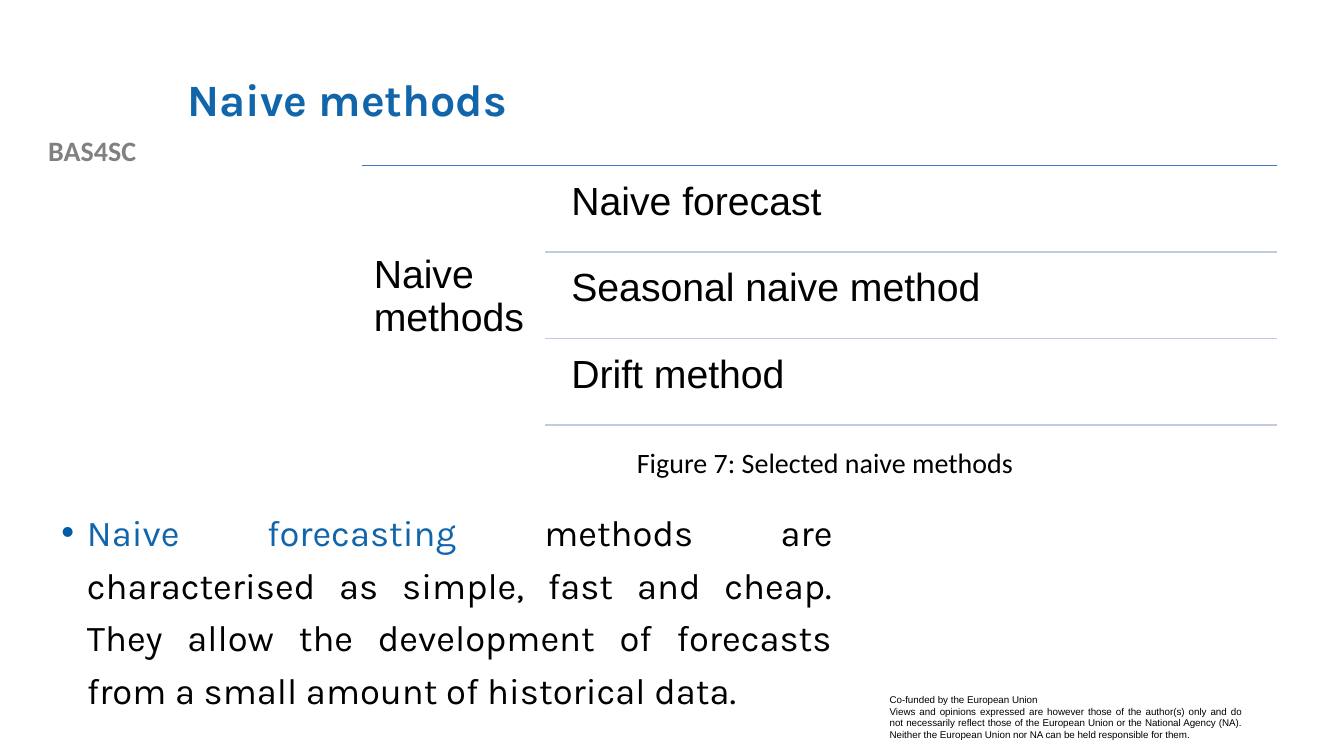
import pptx
import pptx.dml.color
import pptx.enum.shapes
import pptx.enum.text
import pptx.oxml
import pptx.oxml.ns
import pptx.util
from pptx.util import Cm

ALIGN = pptx.enum.text.PP_ALIGN
ANCHOR = pptx.enum.text.MSO_ANCHOR
COLOURS = {
    "black": "000000", "white": "FFFFFF", "grey": "808080", "blue": "1065AB",
    "bullet": "015BA6", "top line": "4472C4", "row line": "C1C9E4",
}

PROJECT = "BAS4SC"
TITLE = "Naive methods"
GROUP = "Naive methods"
METHODS = ["Naive forecast", "Seasonal naive method", "Drift method"]
CAPTION = "Figure 7: Selected naive methods"
BODY = [("Naive forecasting ", "blue"),
        ("methods are characterised as simple, fast and cheap. They allow the "
         "development of forecasts from a small amount of historical data.", "black")]
DISCLAIMER = [
    "Co-funded by the European Union",
    "Views and opinions expressed are however those of the author(s) only and do not "
    "necessarily reflect those of the European Union or the National Agency (NA). "
    "Neither the European Union nor NA can be held responsible for them.",
]

# Diagram measures in centimetres
LEFT, TOP, RIGHT = 9.12, 4.17, 32.18
BRANCH_LEFT, TEXT_LEFT = 13.74, 14.1
ROW_HEIGHT, ROW_GAP = 2.18, 0.1


def colour(name):
    return pptx.dml.color.RGBColor.from_string(COLOURS[name])


def add_bullet(paragraph):
    """Give the paragraph a coloured round bullet with a hanging indent."""
    properties = paragraph._p.get_or_add_pPr()
    properties.set("marL", str(Cm(0.64)))
    properties.set("indent", str(-Cm(0.64)))
    namespace = pptx.oxml.ns.nsdecls("a")
    for xml in (
        f'<a:buClr {namespace}><a:srgbClr val="{COLOURS["bullet"]}"/></a:buClr>',
        f'<a:buFont {namespace} typeface="Arial"/>',
        f'<a:buChar {namespace} char="•"/>',
    ):
        properties.append(pptx.oxml.parse_xml(xml))


def add_text(slide, paragraphs, left, top, width, height, *, font, size,
             text_colour="black", bold=False, align=ALIGN.LEFT, anchor=ANCHOR.TOP,
             spacing=1.0, inset=None, fill=None, bullet=False):
    """Add text; each paragraph is a string or a list of (text, colour) runs."""
    box = (Cm(left), Cm(top), Cm(width), Cm(height))
    if fill:
        shape = slide.shapes.add_shape(pptx.enum.shapes.MSO_SHAPE.RECTANGLE, *box)
        shape.shadow.inherit = False
        shape.fill.solid()
        shape.fill.fore_color.rgb = colour(fill)
        shape.line.fill.background()
    else:
        shape = slide.shapes.add_textbox(*box)
    frame = shape.text_frame
    frame.word_wrap = True
    frame.vertical_anchor = anchor
    if inset is not None:
        frame.margin_left = frame.margin_right = Cm(inset)
        frame.margin_top = frame.margin_bottom = Cm(inset)
    for index, content in enumerate(paragraphs):
        paragraph = frame.add_paragraph() if index else frame.paragraphs[0]
        paragraph.alignment = align
        paragraph.line_spacing = spacing
        if bullet:
            add_bullet(paragraph)
        runs = [(content, text_colour)] if isinstance(content, str) else content
        for text, run_colour in runs:
            run = paragraph.add_run()
            run.text = text
            run.font.name = font
            run.font.size = pptx.util.Pt(size)
            run.font.bold = bold
            run.font.color.rgb = colour(run_colour)


def add_rule(slide, left, y, line_colour):
    line = slide.shapes.add_connector(
        pptx.enum.shapes.MSO_CONNECTOR.STRAIGHT, Cm(left), Cm(y), Cm(RIGHT), Cm(y))
    line.line.color.rgb = colour(line_colour)
    line.line.width = pptx.util.Pt(1)
    line._element.spPr.append(pptx.oxml.parse_xml(
        f'<a:effectLst {pptx.oxml.ns.nsdecls("a")}/>'))


def add_diagram(slide):
    label = dict(font="Arial", size=28, spacing=0.9, inset=0.3)
    add_rule(slide, LEFT, TOP, "top line")
    add_text(slide, [GROUP], LEFT, TOP, BRANCH_LEFT - LEFT, len(METHODS) * ROW_HEIGHT + ROW_GAP,
             anchor=ANCHOR.MIDDLE, **label)
    for row, method in enumerate(METHODS):
        row_top = TOP + row * ROW_HEIGHT
        add_text(slide, [method], TEXT_LEFT, row_top + ROW_GAP, RIGHT - TEXT_LEFT,
                 ROW_HEIGHT - ROW_GAP, **label)
        add_rule(slide, BRANCH_LEFT, row_top + ROW_HEIGHT, "row line")


def main():
    presentation = pptx.Presentation()
    presentation.slide_width, presentation.slide_height = Cm(33.87), Cm(19.05)
    slide = presentation.slides.add_slide(presentation.slide_layouts[6])
    add_text(slide, [PROJECT], 0, 3.25, 4.65, 1.12, font="Calibri", size=20,
             text_colour="grey", bold=True, align=ALIGN.CENTER)
    add_text(slide, DISCLAIMER, 22.17, 17.35, 9.37, 1.45, font="Arial", size=7,
             align=ALIGN.JUSTIFY, fill="white")
    add_text(slide, [TITLE], 4.47, 1.02, 27.08, 3.1, font="Karla", size=32,
             text_colour="blue", bold=True, anchor=ANCHOR.MIDDLE, spacing=0.9)
    add_text(slide, [BODY], 1.3, 12.52, 19.94, 5.59, font="Karla", size=26,
             align=ALIGN.JUSTIFY, spacing=1.2, bullet=True)
    add_text(slide, [CAPTION], 15.8, 11.1, 12.14, 1.12, font="Calibri", size=20)
    add_diagram(slide)
    presentation.save("out.pptx")


if __name__ == "__main__":
    main()
